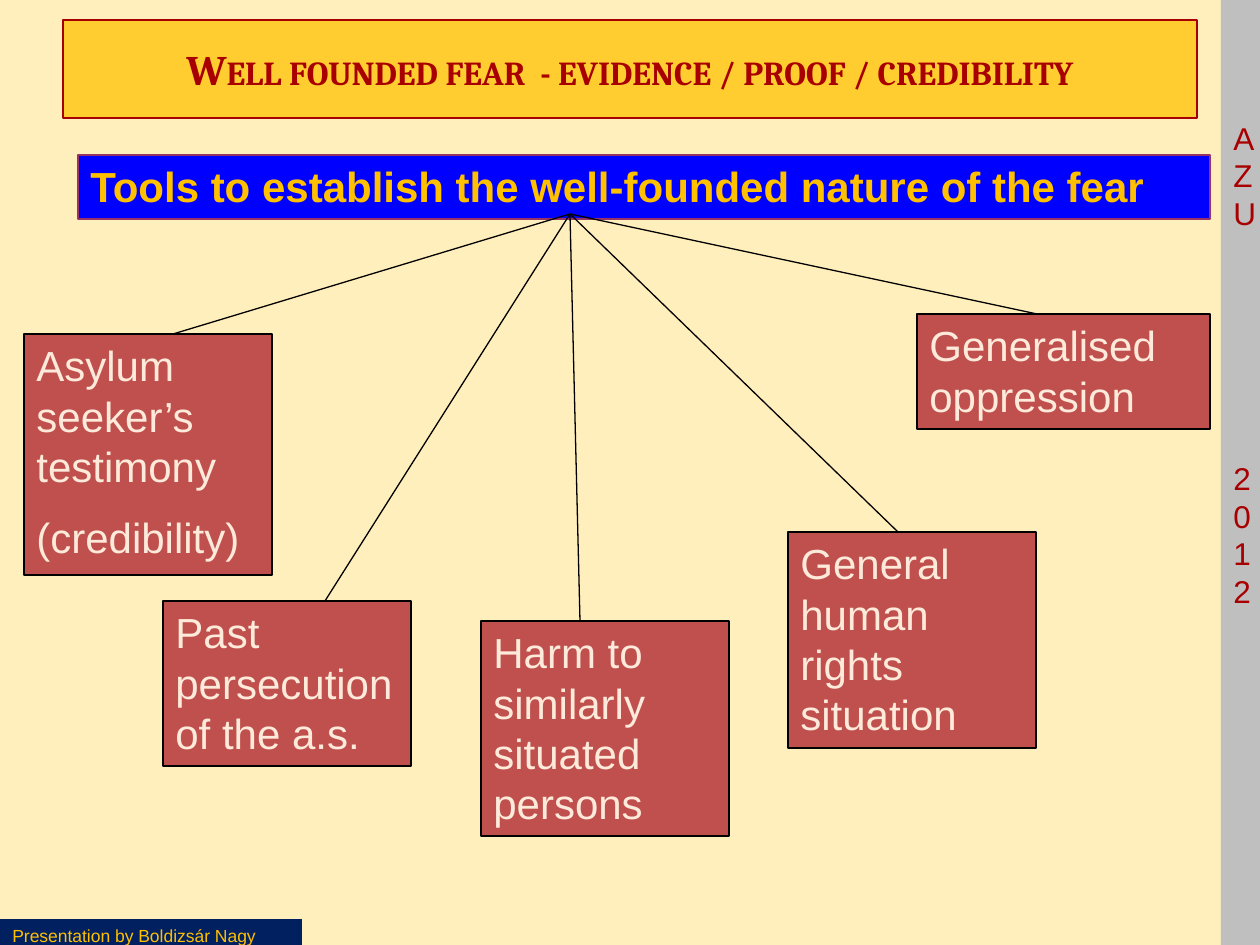
from dataclasses import dataclass

from lxml.etree import SubElement
from pptx import Presentation
from pptx.dml.color import RGBColor
from pptx.enum.shapes import MSO_CONNECTOR, MSO_SHAPE
from pptx.enum.text import MSO_ANCHOR, PP_ALIGN
from pptx.oxml.ns import qn
from pptx.util import Pt

PX = 914400 / 126  # EMU in one px


@dataclass(frozen=True)
class Theme:
    page: str = "FFEFBD"
    sidebar: str = "BFBFBF"
    footer: str = "002060"
    title: str = "FFCD2F"
    red: str = "A80000"
    heading: str = "0000FF"
    heading_line: str = "993366"
    gold: str = "FFC000"
    tool: str = "C0504D"
    tool_text: str = "FDEADA"
    black: str = "000000"
    sans: str = "Arial"
    serif: str = "Cambria"
    body: int = 24
    side: int = 18
    small: int = 10
    line: float = 0.75
    leading: float = 1.195


T = Theme()


def emu(*lengths):
    return [round(n * PX) for n in lengths]


def rgb(colour):
    return RGBColor.from_string(colour)


def add_box(s, box, fill, line=None):
    sp = s.shapes.add_shape(MSO_SHAPE.RECTANGLE, *emu(*box))
    sp.shadow.inherit = False
    sp.fill.solid()
    sp.fill.fore_color.rgb = rgb(fill)
    if line:
        sp.line.color.rgb = rgb(line)
        sp.line.width = Pt(T.line)
    else:
        sp.line.fill.background()
    tf = sp.text_frame
    tf.word_wrap = True
    tf.vertical_anchor = MSO_ANCHOR.TOP
    return tf


def add_text(tf, texts, size, colour, font=T.sans, bold=False,
             align=PP_ALIGN.LEFT, gap=0):
    """Write one paragraph per text, with gap points between them."""
    for i, text in enumerate(texts):
        p = tf.add_paragraph() if i else tf.paragraphs[0]
        p.alignment = align
        p.line_spacing = Pt(round(size * T.leading, 1))
        p.space_before = Pt(gap if i else 0)
        r = p.add_run()
        r.text = text
        r.font.size = Pt(size)
        r.font.name = font
        r.font.bold = bold
        r.font.color.rgb = rgb(colour)


def add_sidebar(s, box):
    tf = add_box(s, box, T.sidebar)
    tf.margin_top, = emu(119)
    # The column is one letter wide, so each letter wraps to its own line
    add_text(tf, ["AZU"], T.side, T.red, align=PP_ALIGN.JUSTIFY)
    for text, gap in (("20", 130), ("12", 0)):
        p = tf.add_paragraph()
        p.alignment = PP_ALIGN.JUSTIFY
        p.line_spacing = tf.paragraphs[0].line_spacing
        p.space_before = Pt(gap)
        r = p.add_run()
        r.text = text
        r.font.size = Pt(T.side)
        r.font.name = T.sans
        r.font.color.rgb = rgb(T.red)


def add_footer(s, box):
    tf = add_box(s, box, T.footer)
    add_text(tf, ["Presentation by Boldizsár Nagy"], T.small, T.gold)


def add_title(s, box):
    tf = add_box(s, box, T.title, T.red)
    tf.vertical_anchor = MSO_ANCHOR.MIDDLE
    add_text(tf, ["Well founded fear  - evidence / proof / credibility"],
             T.body, T.red, T.serif, True, PP_ALIGN.CENTER)
    r = tf.paragraphs[0].runs[0]
    r._r.get_or_add_rPr().set("cap", "small")


def add_heading(s, box):
    tf = add_box(s, box, T.heading, T.heading_line)
    add_text(tf, ["Tools to establish the well-founded nature of the fear"],
             T.body, T.gold, bold=True)


def add_tool(s, box, texts):
    tf = add_box(s, box, T.tool, T.black)
    add_text(tf, texts, T.body, T.tool_text, gap=12)


def add_branch(s, start, end):
    line = s.shapes.add_connector(MSO_CONNECTOR.STRAIGHT, *emu(*start, *end))
    line.line.color.rgb = rgb(T.black)
    line.line.width = Pt(T.line)
    SubElement(line._element.spPr, qn("a:effectLst"))


def add_tree(s, box):
    """Heading across the top, with the tools branching from it."""
    x, y, w, h = box
    add_heading(s, (x, y, w, 64))
    # Offsets from the heading: left, top, width, height, branch end, texts
    tools = [
        (-54, 179, 248, 241, 95, ["Asylum seeker’s testimony", "(credibility)"]),
        (85, 446, 248, 165, 247, ["Past persecution of the a.s."]),
        (403, 466, 248, 215, 502, ["Harm to similarly situated persons"]),
        (710, 377, 248, 216, 820, ["General human rights situation"]),
        (839, 159, 293, 115, 959, ["Generalised oppression"]),
    ]
    for left, top, width, height, _, texts in tools:
        add_tool(s, (x + left, y + top, width, height), texts)
    for _, top, _, _, end, _ in tools:
        add_branch(s, (x + 492, y + 59), (x + end, y + top))


def main():
    prs = Presentation()
    prs.slide_width, prs.slide_height = emu(1260, 945)
    s = prs.slides.add_slide(prs.slide_layouts[6])
    s.background.fill.solid()
    s.background.fill.fore_color.rgb = rgb(T.page)
    add_sidebar(s, (1221, 0, 39, 966))
    add_footer(s, (0, 919, 302, 34))
    add_title(s, (63, 20, 1134, 98))
    add_tree(s, (78, 155, 1132, 681))
    prs.save("out.pptx")


if __name__ == "__main__":
    main()
